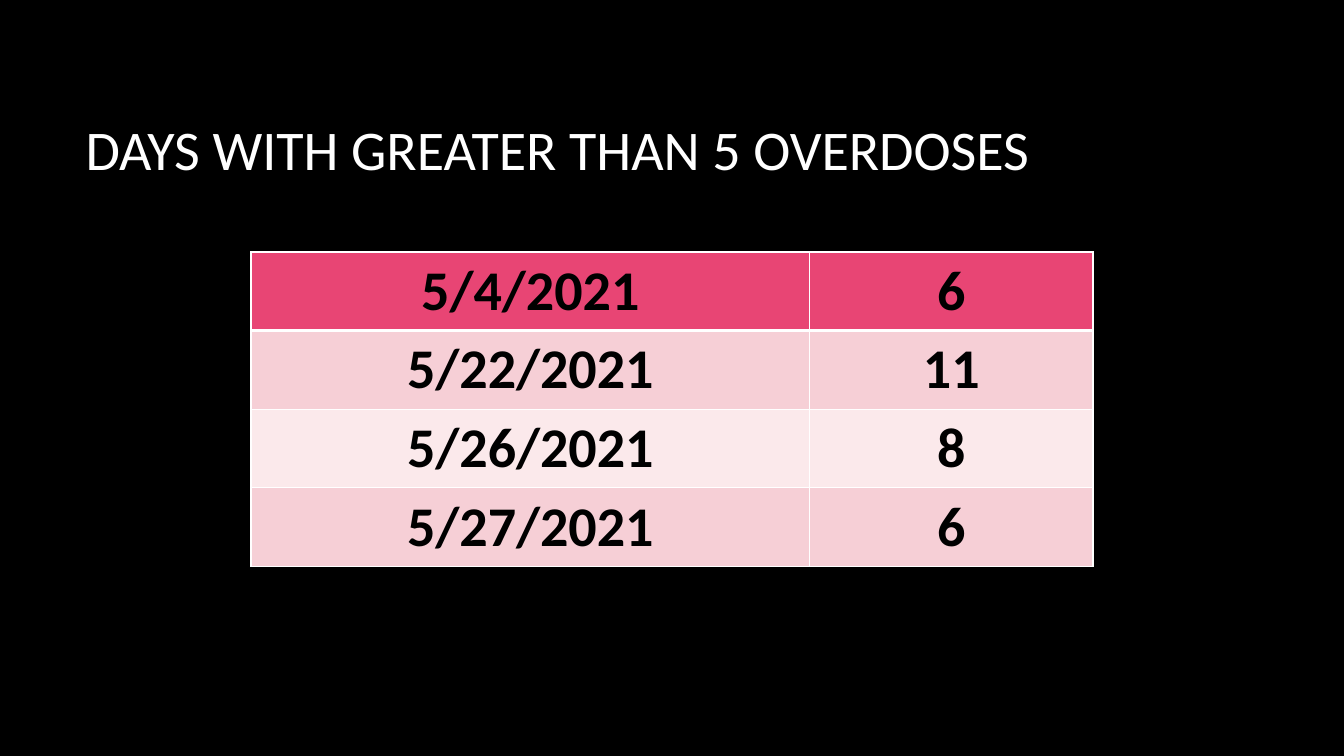
from lxml.etree import SubElement
from pptx import Presentation
from pptx.dml.color import RGBColor
from pptx.enum.text import MSO_ANCHOR, PP_ALIGN
from pptx.oxml.ns import qn
from pptx.util import Inches, Pt

COLORS = {"page": "000000", "title": "FFFFFF", "text": "000000", "line": "FFFFFF",
          "head": "E84574", "odd": "F6CFD6", "even": "FBE9EB"}
OVERDOSES = [("5/4/2021", "6"), ("5/22/2021", "11"), ("5/26/2021", "8"), ("5/27/2021", "6")]


def color(name):
    """Return the named colour."""
    return RGBColor.from_string(COLORS[name])


def style_text(para, name, bold=False):
    """Format every run of a paragraph."""
    for span in para.runs:
        span.font.name, span.font.size = "Calibri", Pt(40)
        span.font.bold, span.font.color.rgb = bold, color(name)


def add_border(cell, side, width):
    """Draw one solid cell border."""
    line = SubElement(cell._tc.get_or_add_tcPr(), qn(f"a:ln{side}"), w=str(Pt(width)))
    fill = SubElement(line, qn("a:solidFill"))
    SubElement(fill, qn("a:srgbClr"), val=COLORS["line"])


def add_title(page, text, left, top, width, height):
    """Place the slide title, centred vertically in its box."""
    box = page.shapes.add_textbox(left, top, width, height)
    frame = box.text_frame
    frame.word_wrap, frame.vertical_anchor = True, MSO_ANCHOR.MIDDLE
    frame.text = text
    style_text(frame.paragraphs[0], "title")


def add_day_table(page, days, left, top, width, height):
    """Place the banded table of days and counts."""
    table = page.shapes.add_table(len(days), 2, left, top, width, height).table
    table.columns[0].width = int(width * 0.6635)
    table.columns[1].width = width - table.columns[0].width
    for row, day in enumerate(days):
        band = "head" if row == 0 else "odd" if row % 2 else "even"
        for column, text in enumerate(day):
            cell = table.cell(row, column)
            widths = {"L": 1, "R": 1, "T": 3 if row == 1 else 1, "B": 3 if row == 0 else 1}
            for side, line_width in widths.items():
                add_border(cell, side, line_width)
            cell.fill.solid()
            cell.fill.fore_color.rgb = color(band)
            cell.text = text
            para = cell.text_frame.paragraphs[0]
            para.alignment = PP_ALIGN.CENTER
            style_text(para, "text", bold=True)


def main():
    """Build and save the slide."""
    deck = Presentation()
    deck.slide_width, deck.slide_height = Inches(13.33), Inches(7.5)
    page = deck.slides.add_slide(deck.slide_layouts[6])
    page.background.fill.solid()
    page.background.fill.fore_color.rgb = color("page")
    add_title(page, "DAYS WITH GREATER THAN 5 OVERDOSES",
              Inches(0.75), Inches(0.67), Inches(11.08), Inches(1.59))
    add_day_table(page, OVERDOSES, Inches(2.49), Inches(2.5), Inches(8.35), Inches(3.12))
    deck.save("out.pptx")


if __name__ == "__main__":
    main()
